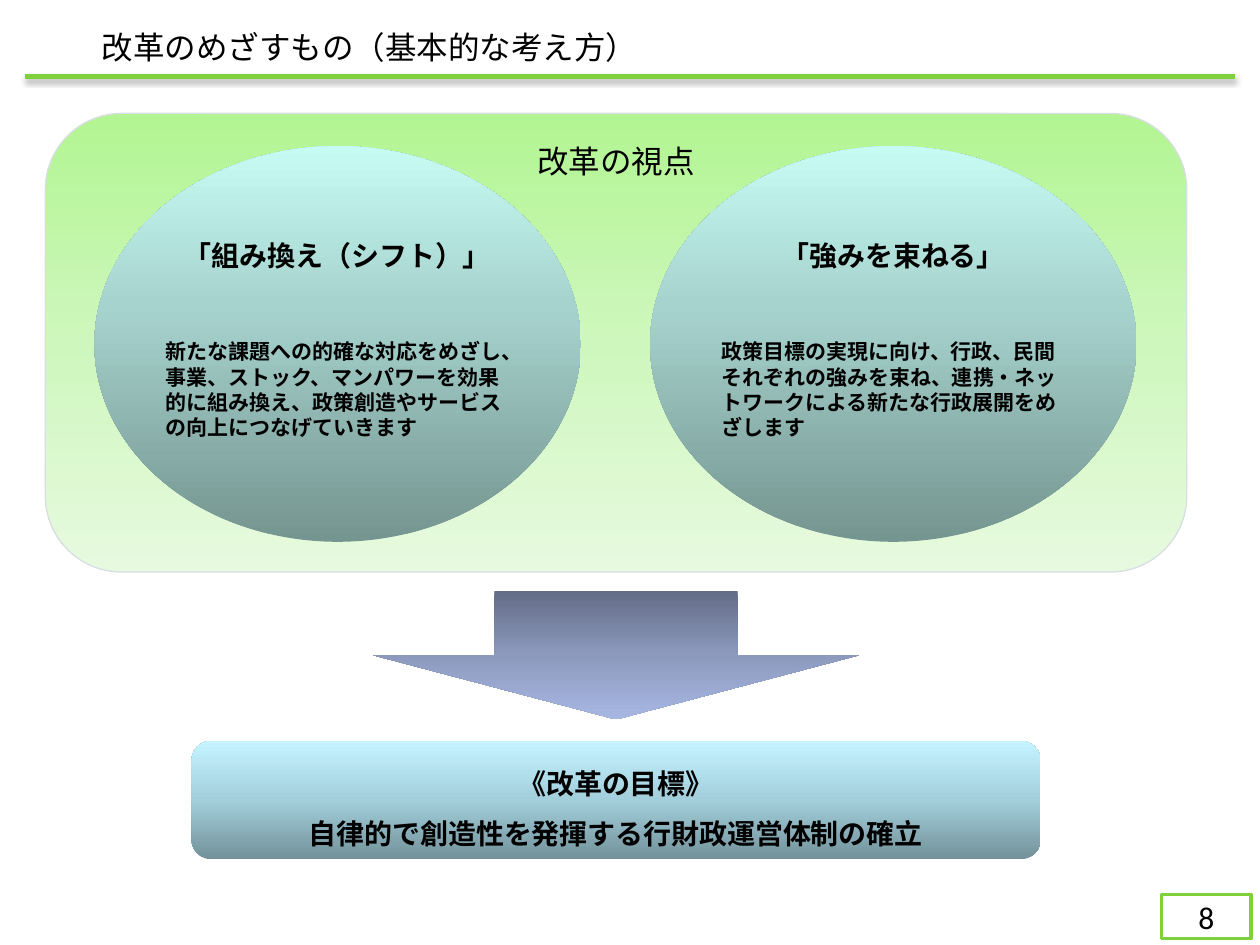
from dataclasses import dataclass

from lxml.etree import SubElement
from pptx import Presentation
from pptx.dml.color import RGBColor
from pptx.enum.shapes import MSO_CONNECTOR, MSO_SHAPE
from pptx.enum.text import MSO_ANCHOR, PP_ALIGN
from pptx.oxml.ns import qn
from pptx.util import Inches, Pt

SLIDE_WIDTH, SLIDE_HEIGHT = Inches(10), Inches(7.5)
JAPANESE_FONT = "Noto Sans CJK JP"
GREEN, WHITE, BLACK = "7FD13B", "FFFFFF", "000000"


@dataclass(frozen=True)
class Box:
    """Place and size in percent of the slide's width and height."""
    left: float
    top: float
    width: float
    height: float

    def lengths(self) -> tuple:
        return (across(self.left), down(self.top),
                across(self.width), down(self.height))


@dataclass(frozen=True)
class Gradient:
    stops: tuple
    angle: int


@dataclass(frozen=True)
class Line:
    text: str
    size: float
    bold: bool = False
    alignment: PP_ALIGN = PP_ALIGN.CENTER
    spacing: float = 1.2  # line pitch as a multiple of the text size
    space_before: float = 0
    font: str = JAPANESE_FONT


@dataclass(frozen=True)
class Viewpoint:
    left: float
    title: str
    description: str


PANEL_FILL = Gradient(((0, "B2F592"), (50, "CEF7BD"), (100, "E7FADF")), 90)
GOAL_FILL = Gradient(((0, "72919A"), (50, "A2CFDB"), (100, "C5F3FF")), 270)
ARROW_FILL = Gradient(((0, "636C86"), (50, "8D9ABE"), (100, "A7B7E2")), 90)
VIEWPOINT_FILL = Gradient(((0, "759590"), (60, "A7D3CE"), (100, "C6FBF4")), 270)

VIEWPOINTS = (
    Viewpoint(7.5, "「組み換え（シフト）」",
              "新たな課題への的確な対応をめざし、事業、ストック、マンパワーを効果的に"
              "組み換え、政策創造やサービスの向上につなげていきます"),
    Viewpoint(51.6, "「強みを束ねる」",
              "政策目標の実現に向け、行政、民間それぞれの強みを束ね、連携・ネットワーク"
              "による新たな行政展開をめざします"),
)


def across(percent: float) -> int:
    return round(SLIDE_WIDTH * percent / 100)


def down(percent: float) -> int:
    return round(SLIDE_HEIGHT * percent / 100)


def color(value: str) -> RGBColor:
    return RGBColor.from_string(value)


def apply_gradient(shape, gradient: Gradient) -> None:
    """Replace the fill by a linear gradient with any number of stops."""
    shape.fill.gradient()
    fill = shape._element.spPr.find(qn("a:gradFill"))
    stop_list = fill.find(qn("a:gsLst"))
    for stop in list(stop_list):
        stop_list.remove(stop)
    for position, value in gradient.stops:
        stop = SubElement(stop_list, qn("a:gs"), pos=str(position * 1000))
        SubElement(stop, qn("a:srgbClr"), val=value)
    fill.find(qn("a:lin")).set("ang", str(gradient.angle * 60000))


def write(shape, lines: tuple, **frame_format) -> None:
    frame = shape.text_frame
    frame.word_wrap = True
    for name, value in frame_format.items():
        setattr(frame, name, value)
    for index, line in enumerate(lines):
        paragraph = frame.add_paragraph() if index else frame.paragraphs[0]
        paragraph.alignment = line.alignment
        paragraph.line_spacing = Pt(round(line.size * line.spacing, 1))
        paragraph.space_before = Pt(line.space_before)
        run = paragraph.add_run()
        run.text = line.text
        run.font.color.rgb = color(BLACK)
        font_format = {"name": line.font, "size": Pt(line.size), "bold": line.bold}
        for name, value in font_format.items():
            setattr(run.font, name, value)
        SubElement(run._r.get_or_add_rPr(), qn("a:ea"), typeface=line.font)


def add_block(slide, kind: MSO_SHAPE, box: Box, fill: Gradient | str,
              outline: str | None = None, outline_width: float = 0):
    shape = slide.shapes.add_shape(kind, *box.lengths())
    shape.shadow.inherit = False
    if isinstance(fill, Gradient):
        apply_gradient(shape, fill)
    else:
        shape.fill.solid()
        shape.fill.fore_color.rgb = color(fill)
    if outline:
        shape.line.color.rgb = color(outline)
        shape.line.width = Pt(outline_width)
    else:
        shape.line.fill.background()
    return shape


def add_header(slide) -> None:
    heading = slide.shapes.add_textbox(*Box(3.5, 2.27, 89, 5.33).lengths())
    write(heading, (Line("改革のめざすもの（基本的な考え方）", 18,
                         alignment=PP_ALIGN.LEFT),), margin_left=Inches(0.46))

    rule = slide.shapes.add_connector(MSO_CONNECTOR.STRAIGHT, across(2), down(8.13),
                                      across(98), down(8.13))
    rule.line.color.rgb = color(GREEN)
    rule.line.width = Pt(3)
    effects = SubElement(rule._element.spPr, qn("a:effectLst"))
    shadow = SubElement(effects, qn("a:outerShdw"), blurRad=str(Pt(3.1)),
                        dist=str(Pt(1.8)), dir=str(90 * 60000), rotWithShape="0")
    shade = SubElement(shadow, qn("a:srgbClr"), val=BLACK)
    SubElement(shade, qn("a:alpha"), val="35000")


def add_viewpoint(slide, viewpoint: Viewpoint) -> None:
    ellipse = add_block(slide, MSO_SHAPE.OVAL,
                        Box(viewpoint.left, 15.47, 38.6, 41.87), VIEWPOINT_FILL)
    write(ellipse,
          (Line(viewpoint.title, 16, bold=True),
           Line(viewpoint.description, 12, bold=True, alignment=PP_ALIGN.LEFT,
                space_before=38.4)),
          vertical_anchor=MSO_ANCHOR.TOP, margin_left=0, margin_right=0,
          margin_top=Inches(0.27), margin_bottom=0)


def main() -> None:
    presentation = Presentation()
    presentation.slide_width, presentation.slide_height = SLIDE_WIDTH, SLIDE_HEIGHT
    slide = presentation.slides.add_slide(presentation.slide_layouts[6])

    add_header(slide)
    page_number = add_block(slide, MSO_SHAPE.RECTANGLE, Box(92.2, 94.67, 7.1, 4.67),
                            WHITE, GREEN, 2)
    write(page_number, (Line("8", 18, font="Calibri"),),
          vertical_anchor=MSO_ANCHOR.MIDDLE)

    panel = add_block(slide, MSO_SHAPE.ROUNDED_RECTANGLE, Box(3.6, 12, 90.6, 48.53),
                      PANEL_FILL, "D9DEE5", 0.75)
    write(panel, (Line("改革の視点", 18),), vertical_anchor=MSO_ANCHOR.TOP)

    goal = add_block(slide, MSO_SHAPE.ROUNDED_RECTANGLE, Box(15.2, 78.4, 67.4, 12.53),
                     GOAL_FILL)
    goal_lines = ("《改革の目標》", "自律的で創造性を発揮する行財政運営体制の確立")
    write(goal, tuple(Line(text, 16, bold=True, spacing=1.8) for text in goal_lines),
          vertical_anchor=MSO_ANCHOR.MIDDLE)

    add_block(slide, MSO_SHAPE.DOWN_ARROW, Box(29.6, 62.53, 38.6, 13.6), ARROW_FILL)
    for viewpoint in VIEWPOINTS:
        add_viewpoint(slide, viewpoint)

    presentation.save("out.pptx")


if __name__ == "__main__":
    main()
